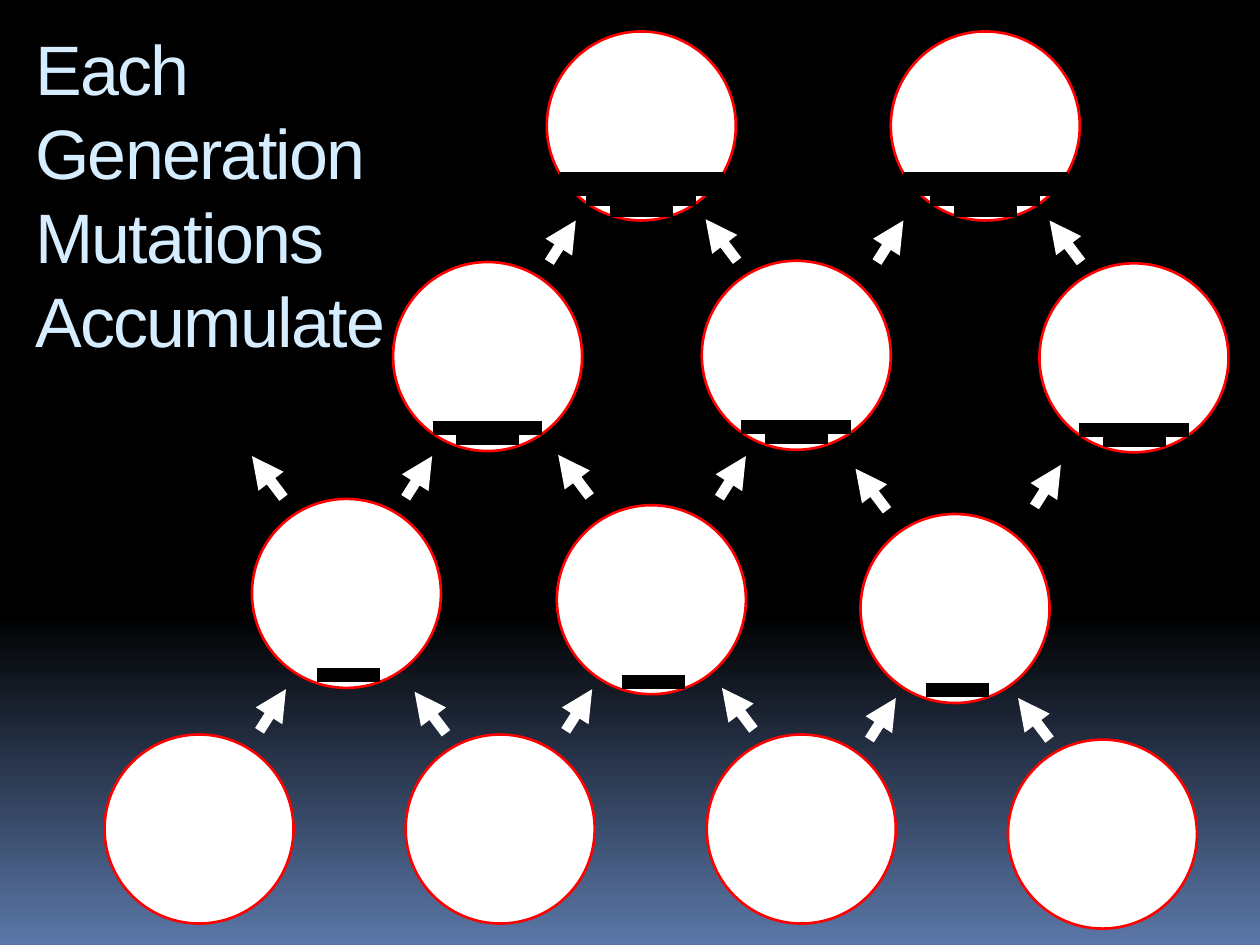
import copy

import pptx
import pptx.dml.color
import pptx.enum.shapes
import pptx.enum.text
import pptx.oxml
import pptx.oxml.ns
import pptx.util

Inches = pptx.util.Inches
Pt = pptx.util.Pt
RGBColor = pptx.dml.color.RGBColor

BLACK = RGBColor(0x00, 0x00, 0x00)
WHITE = RGBColor(0xFF, 0xFF, 0xFF)
RED = RGBColor(0xFF, 0x00, 0x00)
BLUE = RGBColor(0x5B, 0x77, 0xA8)
PALE_BLUE = RGBColor(0xD6, 0xEC, 0xFF)

CELL_SIZE = 1.5
MUTATION_WIDTHS = (0.5, 0.87, 1.21, 1.31)
ARROW_RISE = 0.33
LEAN_RIGHT, LEAN_LEFT = 0.21, -0.25


def sub_element(parent, tag, **attributes):
    child = pptx.oxml.parse_xml(f"<{tag} {pptx.oxml.ns.nsdecls('a')}/>")
    for name, value in attributes.items():
        child.set(name, value)
    parent.append(child)


class GenerationSlide:
    font = "Arial"

    def __init__(self, presentation):
        self.slide = presentation.slides.add_slide(presentation.slide_layouts[5])
        self.shapes = self.slide.shapes

    def background(self):
        fill = self.slide.background.fill
        fill.gradient()
        fill.gradient_angle = 270
        first_stop = self.slide.element.find(".//" + pptx.oxml.ns.qn("a:gs"))
        first_stop.addnext(copy.deepcopy(first_stop))
        stops = ((0, BLACK), (0.65, BLACK), (1, BLUE))
        for stop, (position, color) in zip(fill.gradient_stops, stops):
            stop.position = position
            stop.color.rgb = color

    def title(self, text, left, top, width, height):
        heading = self.slide.shapes.title
        heading.left, heading.top = Inches(left), Inches(top)
        heading.width, heading.height = Inches(width), Inches(height)
        frame = heading.text_frame
        frame.text = text
        frame.word_wrap = True
        frame.auto_size = pptx.enum.text.MSO_AUTO_SIZE.NONE
        frame.vertical_anchor = pptx.enum.text.MSO_ANCHOR.TOP
        paragraph = frame.paragraphs[0]
        paragraph.alignment = pptx.enum.text.PP_ALIGN.LEFT
        paragraph.line_spacing = Pt(48)
        for run in paragraph.runs:
            run.font.name = self.font
            run.font.size = Pt(40)
            run.font.color.rgb = PALE_BLUE
            run.font._element.set("spc", "-100")

    def start_group(self):
        self.shapes = self.slide.shapes.add_group_shape().shapes

    def line(self, start, end, color, width):
        line = self.shapes.add_connector(
            pptx.enum.shapes.MSO_CONNECTOR.STRAIGHT,
            *(Inches(value) for value in (*start, *end)))
        line.line.color.rgb = color
        line.line.width = Pt(width)
        sub_element(line._element.spPr, "a:effectLst")
        return line

    def arrow(self, x, y, lean):
        arrow = self.line((x, y), (x + lean, y - ARROW_RISE), WHITE, 6)
        sub_element(arrow.line._get_or_add_ln(), "a:tailEnd", type="triangle")

    def cell(self, left, top, mutation_heights=(), shift=0):
        """Draw a cell with one bar per inherited mutation, lowest first."""
        cell = self.shapes.add_shape(
            pptx.enum.shapes.MSO_SHAPE.OVAL, Inches(left), Inches(top),
            Inches(CELL_SIZE), Inches(CELL_SIZE))
        cell.shadow.inherit = False
        cell.fill.solid()
        cell.fill.fore_color.rgb = WHITE
        cell.line.color.rgb = RED
        cell.line.width = Pt(1.5)
        center = left + CELL_SIZE / 2 + shift
        for width, height in zip(MUTATION_WIDTHS, mutation_heights):
            y = top + height
            self.line((center - width / 2, y), (center + width / 2, y), BLACK, 8)

    def generation(self, cells, mutation_heights, right_arrows, left_arrows, shift=0):
        self.start_group()
        for left, top in cells:
            self.cell(left, top, mutation_heights, shift)
        for lean, starts in ((LEAN_RIGHT, right_arrows), (LEAN_LEFT, left_arrows)):
            for x, y in starts:
                self.arrow(x, y, lean)


def main():
    presentation = pptx.Presentation()
    presentation.slide_width = Inches(10)
    presentation.slide_height = Inches(7.5)

    page = GenerationSlide(presentation)
    page.background()
    page.title("Each Generation\vMutations Accumulate", 0.18, 0.15, 3.24, 1.51)

    for left, top in ((0.83, 5.83), (3.22, 5.83), (5.61, 5.83), (8, 5.87)):
        page.cell(left, top)
    page.generation(
        cells=((4.42, 4.01), (6.83, 4.08), (2, 3.96)),
        mutation_heights=(1.4,),
        right_arrows=((2.06, 5.8), (4.49, 5.8), (6.9, 5.87)),
        left_arrows=((3.54, 5.82), (5.98, 5.79), (8.33, 5.87)),
        shift=0.02)
    page.generation(
        cells=((3.12, 2.08), (5.57, 2.07), (8.25, 2.09)),
        mutation_heights=(1.4, 1.32),
        right_arrows=((3.22, 3.95), (5.71, 3.95), (8.21, 4.02)),
        left_arrows=((2.25, 3.95), (4.68, 3.94), (7.04, 4.05)))
    page.generation(
        cells=((4.34, 0.25), (7.07, 0.25)),
        mutation_heights=(1.42, 1.33, 1.25, 1.17),
        right_arrows=((4.36, 2.08), (6.96, 2.08)),
        left_arrows=((5.85, 2.07), (8.58, 2.08)))

    presentation.save("out.pptx")


if __name__ == "__main__":
    main()
